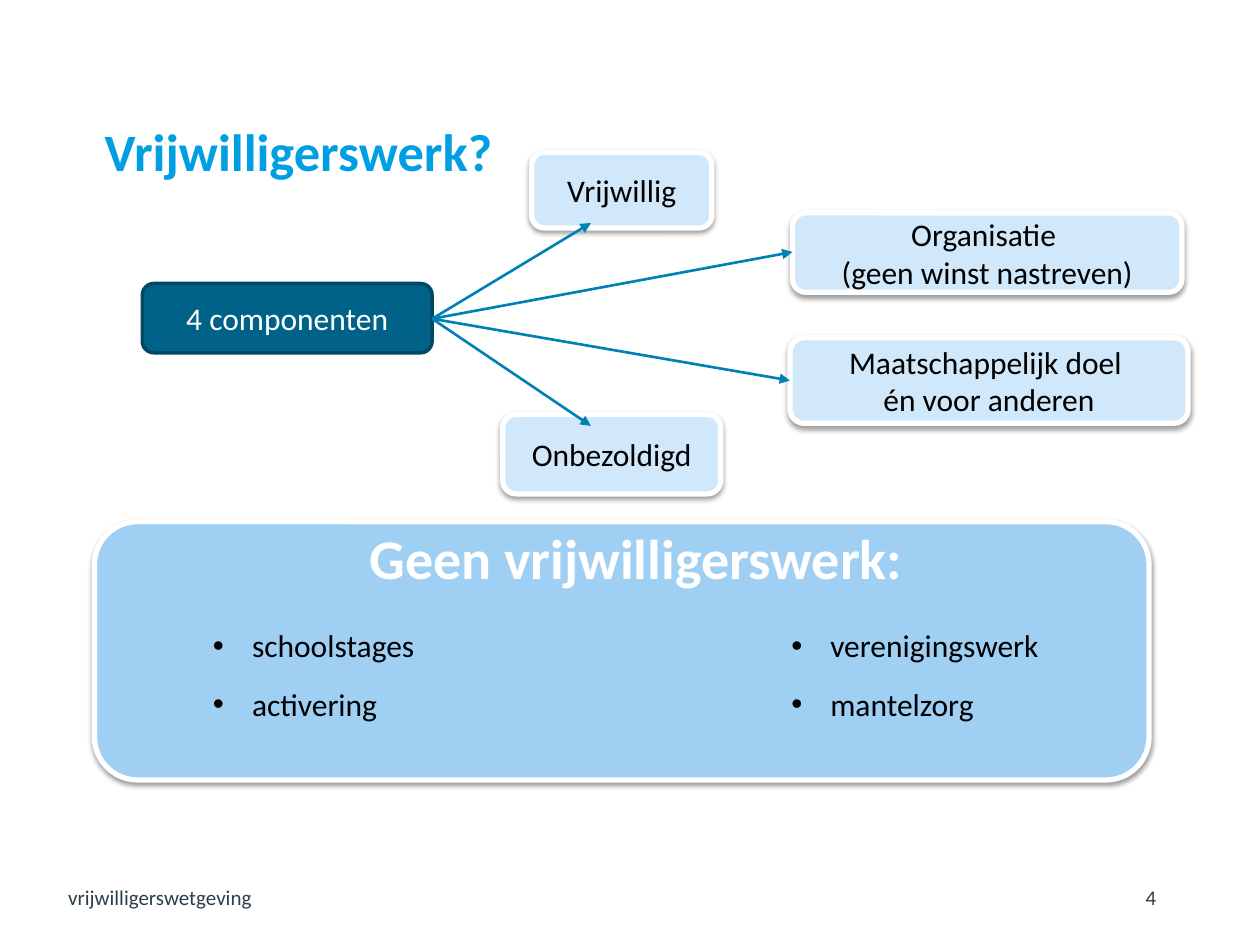
from lxml import etree
from pptx import Presentation
from pptx.dml.color import RGBColor
from pptx.enum.shapes import MSO_CONNECTOR, MSO_SHAPE
from pptx.enum.text import MSO_ANCHOR, MSO_AUTO_SIZE, PP_ALIGN
from pptx.oxml import parse_xml
from pptx.oxml.ns import nsdecls, qn
from pptx.util import Inches, Pt

ROUNDED = MSO_SHAPE.ROUNDED_RECTANGLE
STRAIGHT = MSO_CONNECTOR.STRAIGHT
LEFT, CENTER = PP_ALIGN.LEFT, PP_ALIGN.CENTER
TOP, MIDDLE = MSO_ANCHOR.TOP, MSO_ANCHOR.MIDDLE
NO_AUTOFIT = MSO_AUTO_SIZE.NONE

FONT = "Calibri"
BLACK = RGBColor(0x00, 0x00, 0x00)
WHITE = RGBColor(0xFF, 0xFF, 0xFF)
TITLE_BLUE = RGBColor(0x00, 0x9F, 0xE3)
PANEL_BLUE = RGBColor(0x9F, 0xCF, 0xF3)
BOX_BLUE = RGBColor(0xD1, 0xE8, 0xFA)
DARK_BLUE = RGBColor(0x00, 0x62, 0x88)
DARK_OUTLINE = RGBColor(0x00, 0x49, 0x65)
ARROW_BLUE = RGBColor(0x00, 0x81, 0xB5)
FOOTER_GRAY = RGBColor(0x2C, 0x3F, 0x48)

SHADOW_XML = (
    f'<a:effectLst {nsdecls("a")}><a:outerShdw blurRad="39400" dist="20300" dir="5400000" '
    'rotWithShape="0"><a:srgbClr val="000000"><a:alpha val="38000"/></a:srgbClr>'
    '</a:outerShdw></a:effectLst>'
)


def set_text(shape, lines, size, color, align=LEFT, bold=False, anchor=TOP, margin=None):
    frame = shape.text_frame
    frame.word_wrap = True
    frame.auto_size = NO_AUTOFIT
    frame.vertical_anchor = anchor
    if margin is not None:
        frame.margin_left = frame.margin_right = margin
        frame.margin_top = frame.margin_bottom = margin
    frame.text = "\n".join(lines)
    for paragraph in frame.paragraphs:
        paragraph.alignment = align
        paragraph.space_before = Pt(0)
        paragraph.font.name = FONT
        paragraph.font.size = Pt(size)
        paragraph.font.bold = bold
        paragraph.font.color.rgb = color


def add_box(position, fill, outline, outline_width, shadow=True):
    box = slide.shapes.add_shape(ROUNDED, *map(Inches, position))
    box.fill.solid()
    box.fill.fore_color.rgb = fill
    box.line.color.rgb = outline
    box.line.width = Pt(outline_width)
    if shadow:
        box._element.spPr.append(parse_xml(SHADOW_XML))
    else:
        box.shadow.inherit = False
    return box


presentation = Presentation()
presentation.slide_width = Inches(10)
presentation.slide_height = Inches(7.5)
slide = presentation.slides.add_slide(presentation.slide_layouts[3])
title, left_list, right_list = slide.placeholders

# Panel, moved behind the placeholders
panel = add_box((0.75, 4.14, 8.37, 2.05), PANEL_BLUE, WHITE, 3)
slide.shapes._spTree.insert(2, panel._element)

# Title
title.left, title.top, title.width, title.height = map(Inches, (0.83, 1, 8.32, 0.4))
set_text(title, ["Vrijwilligerswerk?"], 30, TITLE_BLUE, bold=True, margin=0)
title.text_frame.paragraphs[0].line_spacing = 0.91

# Component boxes
components = [
    ("Maatschappelijk doel \vén voor anderen", (6.27, 2.68, 3.16, 0.68)),
    ("Organisatie \v(geen winst nastreven)", (6.29, 1.69, 3.09, 0.63)),
    ("Onbezoldigd", (3.99, 3.29, 1.73, 0.63)),
    ("Vrijwillig", (4.22, 1.21, 1.43, 0.6)),
]
for label, position in components:
    box = add_box(position, BOX_BLUE, WHITE, 3)
    set_text(box, [label], 18, BLACK, CENTER, anchor=MIDDLE)

source_box = add_box((1.13, 2.25, 2.3, 0.55), DARK_BLUE, DARK_OUTLINE, 2, shadow=False)
set_text(source_box, ["4 componenten"], 18, WHITE, CENTER, anchor=MIDDLE)

# Arrows from the source box to each component
for end_x, end_y in [(4.69, 1.77), (6.29, 2), (6.27, 3.02), (4.69, 3.38)]:
    arrow = slide.shapes.add_connector(
        STRAIGHT, Inches(3.43), Inches(2.53), Inches(end_x), Inches(end_y))
    arrow.line.color.rgb = ARROW_BLUE
    arrow.line.width = Pt(1.5)
    etree.SubElement(arrow.line._get_or_add_ln(), qn("a:tailEnd"), type="triangle")
    etree.SubElement(arrow._element.spPr, qn("a:effectLst"))

# Panel heading, footer and slide number
captions = [
    ("Geen vrijwilligerswerk:", (0.75, 4.2, 8.6, 0.55), 32, WHITE, CENTER, True),
    ("vrijwilligerswetgeving", (0.54, 7.02, 6.35, 0.24), 12, FOOTER_GRAY, LEFT, False),
    ("4", (8.93, 7.02, 0.41, 0.25), 12, FOOTER_GRAY, CENTER, False),
]
for text, position, size, color, align, bold in captions:
    caption = slide.shapes.add_textbox(*map(Inches, position))
    set_text(caption, [text], size, color, align, bold, margin=0)
    if bold:
        caption.text_frame.paragraphs[0].line_spacing = 0.93

# Bulleted lists
lists = [
    (left_list, 1.59, ["schoolstages", "activering"]),
    (right_list, 6.18, ["verenigingswerk", "mantelzorg"]),
]
for placeholder, left, items in lists:
    placeholder.left, placeholder.top = Inches(left), Inches(4.92)
    placeholder.width, placeholder.height = Inches(2.78), Inches(0.87)
    set_text(placeholder, items, 18, BLACK)
    for paragraph in placeholder.text_frame.paragraphs:
        properties = paragraph._p.get_or_add_pPr()
        properties.set("marL", str(Inches(0.31)))
        properties.set("indent", str(-Inches(0.31)))
    placeholder.text_frame.paragraphs[1].space_before = Pt(12)

presentation.save("out.pptx")
